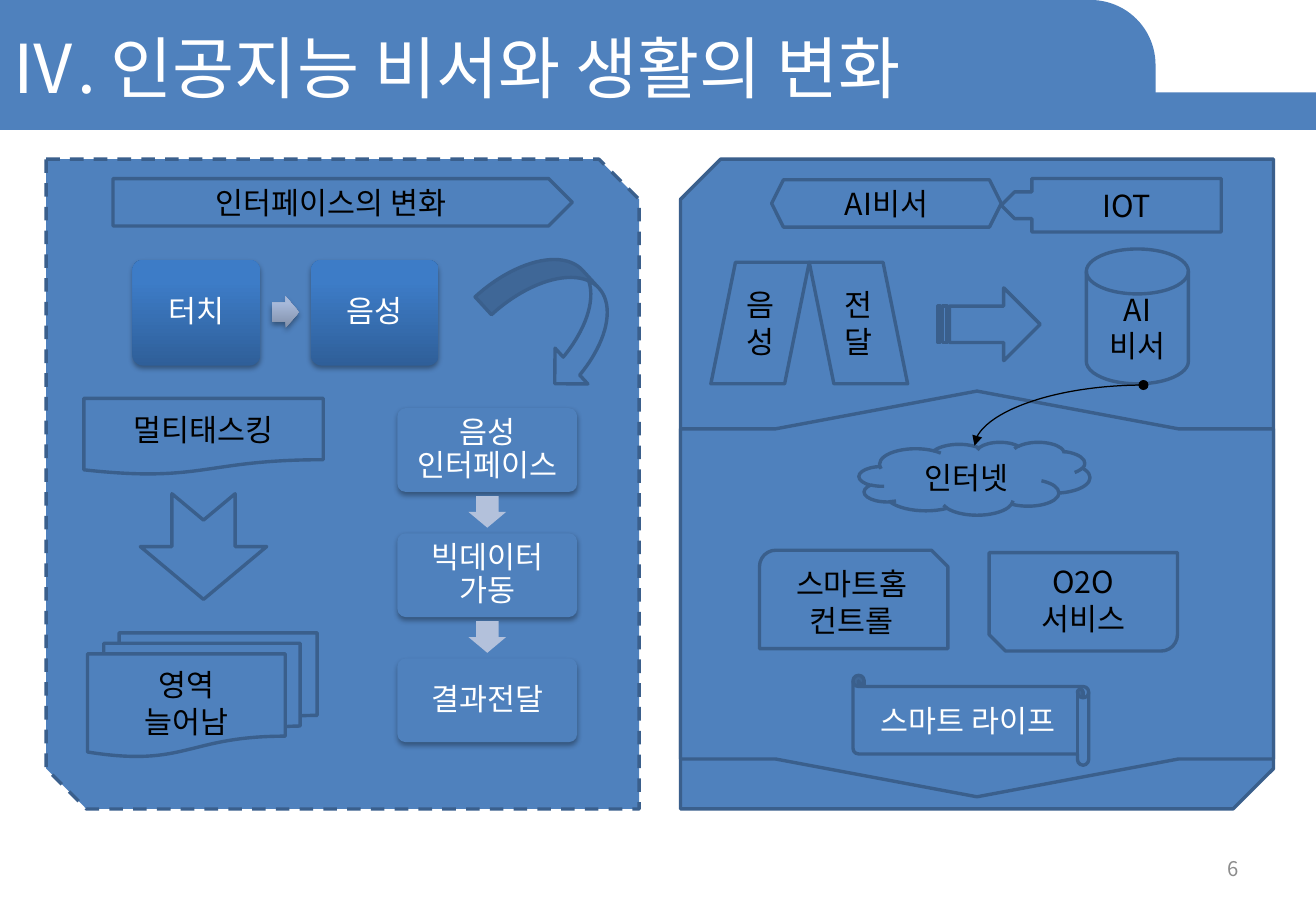
from lxml.etree import SubElement
from pptx import Presentation
from pptx.dml.color import RGBColor
from pptx.enum.dml import MSO_LINE
from pptx.enum.shapes import MSO_CONNECTOR, MSO_SHAPE
from pptx.enum.text import MSO_ANCHOR, MSO_AUTO_SIZE, PP_ALIGN
from pptx.oxml.ns import qn
from pptx.util import Inches, Pt

FONT = "Noto Sans CJK KR"
BLUE = RGBColor(0x4F, 0x81, 0xBD)
OUTLINE = RGBColor(0x3A, 0x5F, 0x8C)
PALE_ARROW = RGBColor(0xB3, 0xC1, 0xDB)
BUTTON_GRADIENT = (RGBColor(0x2F, 0x5F, 0x99), RGBColor(0x3D, 0x7C, 0xC7))
ARROW_GRADIENT = (RGBColor(0x81, 0x8F, 0xA8), RGBColor(0xA7, 0xB9, 0xDA))
WHITE = RGBColor(0xFF, 0xFF, 0xFF)
BLACK = RGBColor(0, 0, 0)
GRAY = RGBColor(0x8C, 0x8C, 0x8C)


def write_text(shape, text, size=18, color=BLACK, align=PP_ALIGN.CENTER,
               anchor=MSO_ANCHOR.MIDDLE):
    frame = shape.text_frame
    frame.text = text
    frame.word_wrap = True
    frame.vertical_anchor = anchor
    for paragraph in frame.paragraphs:
        paragraph.alignment = align
        font = paragraph.font
        font.size = Pt(size)
        font.color.rgb = color
        font.name = FONT
        properties = paragraph._p.pPr.find(qn("a:defRPr"))
        SubElement(properties, qn("a:ea"), typeface=FONT)


def add_filled(shapes, kind, left, top, width, height, fill=BLUE, adjust=(),
               rotation=0):
    shape = shapes.add_shape(kind, Inches(left), Inches(top), Inches(width), Inches(height))
    shape.shadow.inherit = False
    shape.fill.solid()
    shape.fill.fore_color.rgb = fill
    shape.line.fill.background()
    shape.rotation = rotation
    for index, value in enumerate(adjust):
        shape.adjustments[index] = value
    return shape


def add_outlined(shapes, kind, left, top, width, height, text="", color=BLACK,
                 adjust=(), rotation=0, flip=""):
    """Add a blue shape with a dark outline; flip holds the axes to mirror, H and V."""
    shape = add_filled(shapes, kind, left, top, width, height, BLUE, adjust, rotation)
    shape.line.color.rgb = OUTLINE
    shape.line.width = Pt(2)
    for axis in flip:
        shape.element.spPr.xfrm.set(f"flip{axis}", "1")
    if text:
        write_text(shape, text, color=color)
    return shape


def add_text_box(shapes, left, top, width, height, text, **style):
    box = shapes.add_textbox(Inches(left), Inches(top), Inches(width), Inches(height))
    write_text(box, text, **style)


def apply_gradient(shape, colors):
    shape.fill.gradient()
    shape.fill.gradient_angle = 90
    for stop, color, position in zip(shape.fill.gradient_stops, colors, (0, 0.8)):
        stop.color.rgb = color
        stop.position = position


def add_drop_shadow(shape):
    effects = shape.element.spPr.find(qn("a:effectLst"))
    shadow = SubElement(effects, qn("a:outerShdw"), blurRad="40000", dist="23000",
                        dir="5400000", rotWithShape="0")
    color = SubElement(shadow, qn("a:srgbClr"), val="000000")
    SubElement(color, qn("a:alpha"), val="35000")


def add_node(shapes, left, top, width, height, text):
    """Add a rounded, shadowed box of a process."""
    node = add_filled(shapes, MSO_SHAPE.ROUNDED_RECTANGLE, left, top, width, height,
                      adjust=(0.1,))
    add_drop_shadow(node)
    write_text(node, text, color=WHITE)
    frame = node.text_frame
    frame.margin_left = frame.margin_right = Inches(0.07)
    frame.margin_top = frame.margin_bottom = Inches(0.07)
    frame.paragraphs[0].line_spacing = 0.9
    return node


def add_curved_arrow(shapes, start, end):
    connector = shapes.add_connector(MSO_CONNECTOR.CURVE, *map(Inches, start + end))
    connector.line.color.rgb = BLACK
    connector.line.width = Pt(0.75)
    properties = connector.element.spPr
    properties.find(qn("a:prstGeom")).set("prst", "curvedConnector2")
    line = properties.find(qn("a:ln"))
    SubElement(line, qn("a:headEnd"), type="oval")
    SubElement(line, qn("a:tailEnd"), type="triangle")
    SubElement(properties, qn("a:effectLst"))


def add_header(slide):
    add_filled(slide.shapes, MSO_SHAPE.RECTANGLE, -0.02, 0.76, 10.85, 0.31)
    add_filled(slide.shapes, MSO_SHAPE.ROUND_1_RECTANGLE, -0.02, 0, 9.53, 1.07,
               adjust=(0.5,))
    title = slide.shapes.title
    title.left, title.top = Inches(-0.02), Inches(0.02)
    title.width, title.height = Inches(9.06), Inches(1.06)
    write_text(title, "Ⅳ. 인공지능 비서와 생활의 변화", 40, WHITE, PP_ALIGN.LEFT)
    title.text_frame.auto_size = MSO_AUTO_SIZE.NONE
    slide.shapes.element.append(title.element)


def add_interface_panel(shapes):
    panel = add_outlined(shapes, MSO_SHAPE.SNIP_2_DIAG_RECTANGLE, 0.38, 1.31, 4.88, 5.35,
                         adjust=(0, 0.068))
    panel.line.dash_style = MSO_LINE.DASH
    add_outlined(shapes, MSO_SHAPE.RIGHT_ARROW, 0.93, 1.47, 3.78, 0.39,
                 "인터페이스의 변화", adjust=(1, 0.5))

    for left, text in ((1.09, "터치"), (2.56, "음성")):
        button = add_node(shapes, left, 2.14, 1.05, 0.87, text)
        apply_gradient(button, BUTTON_GRADIENT)
    arrow = add_filled(shapes, MSO_SHAPE.RIGHT_ARROW, 2.24, 2.44, 0.22, 0.26,
                       adjust=(0.6, 0.5))
    apply_gradient(arrow, ARROW_GRADIENT)
    add_drop_shadow(arrow)

    add_outlined(shapes, MSO_SHAPE.FLOWCHART_DOCUMENT, 0.69, 3.28, 1.97, 0.63, "멀티태스킹")
    add_outlined(shapes, MSO_SHAPE.NOTCHED_RIGHT_ARROW, 1.24, 3.98, 0.87, 1.04, rotation=90)
    add_outlined(shapes, MSO_SHAPE.FLOWCHART_MULTIDOCUMENT, 0.72, 5.21, 1.89, 1.02,
                 "영역\n늘어남")

    steps = ("음성\v인터페이스", "빅데이터\v가동", "결과전달")
    for index, text in enumerate(steps):
        top = 3.36 + 1.03 * index
        add_node(shapes, 3.27, top, 1.48, 0.69, text)
        if index < len(steps) - 1:
            add_filled(shapes, MSO_SHAPE.RIGHT_ARROW, 3.88, top + 0.7, 0.26, 0.31,
                       PALE_ARROW, (0.6, 0.5), 90)
    add_outlined(shapes, MSO_SHAPE.CURVED_LEFT_ARROW, 4.2, 2.02, 0.8, 1.17, rotation=317.5)


def add_assistant_panel(shapes):
    add_outlined(shapes, MSO_SHAPE.SNIP_2_DIAG_RECTANGLE, 5.6, 1.31, 4.88, 5.35,
                 adjust=(0, 0.068), flip="V")
    add_outlined(shapes, MSO_SHAPE.LEFT_RIGHT_ARROW_CALLOUT, 6.37, 2.45, 3.34, 4.88,
                 adjust=(0.992, 0.496, 0.093, 0.82), rotation=90)
    add_outlined(shapes, MSO_SHAPE.HEXAGON, 6.35, 1.48, 1.89, 0.39, "AI비서")
    add_outlined(shapes, MSO_SHAPE.LEFT_ARROW_CALLOUT, 8.24, 1.47, 1.81, 0.44, "IOT",
                 adjust=(0.5, 0.25, 0.25, 0.861))
    add_outlined(shapes, MSO_SHAPE.PARALLELOGRAM, 6.66, 2.16, 0.81, 1, "전달", flip="H")
    add_outlined(shapes, MSO_SHAPE.PARALLELOGRAM, 5.85, 2.16, 0.81, 1, "음성")
    add_outlined(shapes, MSO_SHAPE.STRIPED_RIGHT_ARROW, 7.72, 2.37, 0.84, 0.6)
    add_outlined(shapes, MSO_SHAPE.CLOUD, 7.07, 3.64, 1.9, 0.6, "인터넷")
    add_outlined(shapes, MSO_SHAPE.SNIP_ROUND_RECTANGLE, 6.25, 4.53, 1.55, 0.81,
                 "스마트홈\n컨트롤")
    add_outlined(shapes, MSO_SHAPE.SNIP_ROUND_RECTANGLE, 8.14, 4.55, 1.55, 0.81, flip="HV")
    add_text_box(shapes, 8.42, 4.59, 0.99, 0.71, "O2O\n서비스", anchor=MSO_ANCHOR.TOP)
    add_outlined(shapes, MSO_SHAPE.HORIZONTAL_SCROLL, 7.02, 5.56, 1.94, 0.74,
                 "스마트 라이프", WHITE, flip="H")


def main():
    presentation = Presentation()
    presentation.slide_width = Inches(10.83)
    presentation.slide_height = Inches(7.5)
    slide = presentation.slides.add_slide(presentation.slide_layouts[5])
    shapes = slide.shapes

    add_header(slide)
    add_text_box(shapes, 7.76, 6.95, 2.53, 0.4, "6", size=12, color=GRAY,
                 align=PP_ALIGN.RIGHT)
    add_interface_panel(shapes.add_group_shape().shapes)
    add_assistant_panel(shapes.add_group_shape().shapes)
    add_outlined(shapes, MSO_SHAPE.FLOWCHART_MAGNETIC_DISK, 8.94, 2.05, 0.84, 1.11,
                 "AI\n비서")
    add_curved_arrow(shapes, (9.41, 3.17), (8.02, 3.67))
    presentation.save("out.pptx")


if __name__ == "__main__":
    main()
